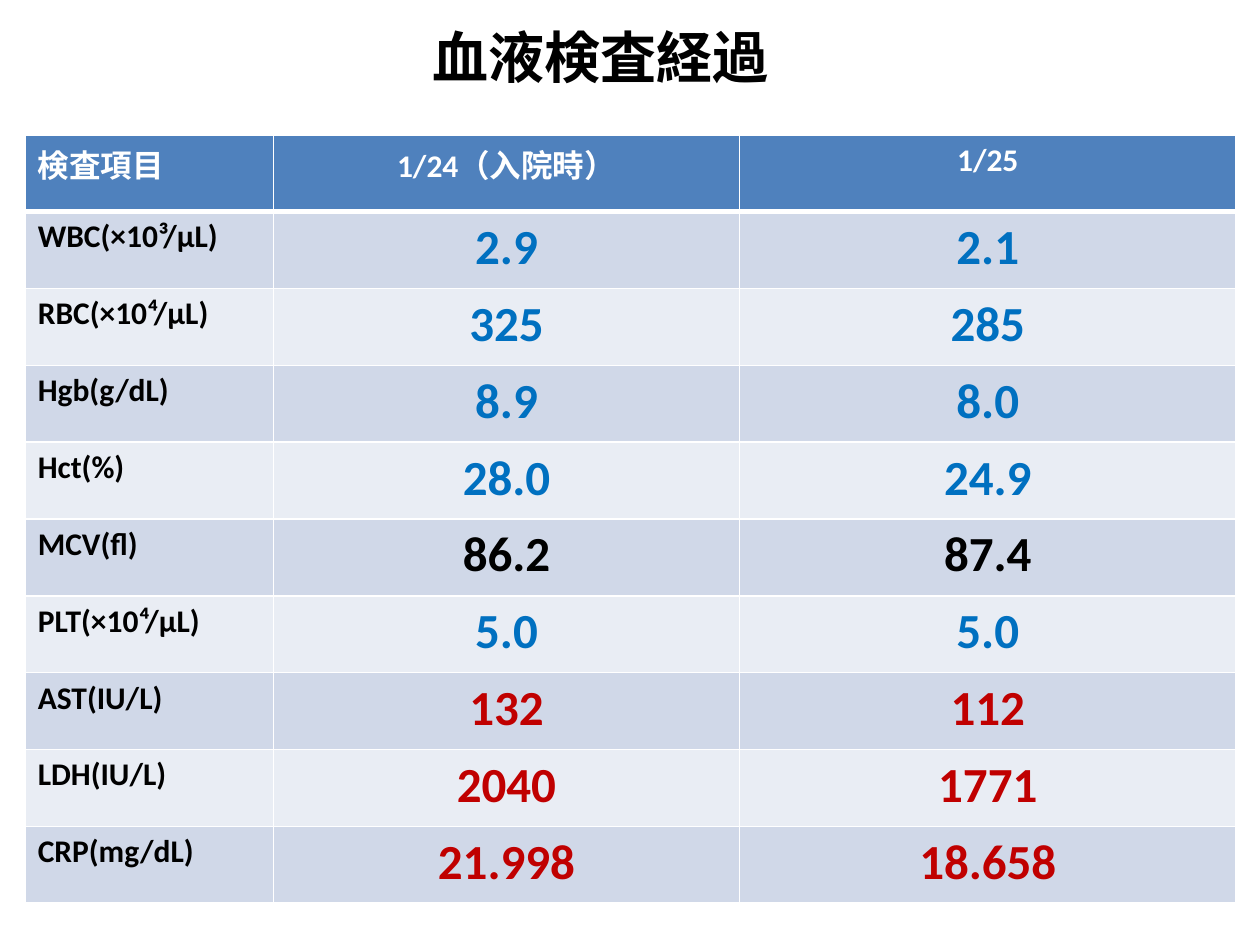
from dataclasses import dataclass

from lxml import etree
from pptx import Presentation
from pptx.dml.color import RGBColor
from pptx.enum.text import MSO_AUTO_SIZE, PP_ALIGN
from pptx.oxml.ns import qn
from pptx.table import _Cell
from pptx.text.text import TextFrame
from pptx.util import Inches, Pt

LEFT, CENTER = PP_ALIGN.LEFT, PP_ALIGN.CENTER
FIT = MSO_AUTO_SIZE.SHAPE_TO_FIT_TEXT

WHITE = RGBColor(0xFF, 0xFF, 0xFF)
BLACK = RGBColor(0x00, 0x00, 0x00)
HEAD = RGBColor(0x4F, 0x81, 0xBD)
BANDS = (RGBColor(0xD0, 0xD8, 0xE8), RGBColor(0xE9, 0xED, 0xF4))
LOW = RGBColor(0x00, 0x70, 0xC0)
HIGH = RGBColor(0xC0, 0x00, 0x00)

WIDTHS = (1.97, 3.7, 3.94)
ROW_H = 0.61


@dataclass
class Test:
    name: str
    first: str
    second: str
    color: RGBColor


HEADS = ("検査項目", "1/24（入院時）", "1/25")
TESTS = (
    Test("WBC(×10³/μL)", "2.9", "2.1", LOW),
    Test("RBC(×10⁴/μL)", "325", "285", LOW),
    Test("Hgb(g/dL)", "8.9", "8.0", LOW),
    Test("Hct(%)", "28.0", "24.9", LOW),
    Test("MCV(fl)", "86.2", "87.4", BLACK),
    Test("PLT(×10⁴/μL)", "5.0", "5.0", LOW),
    Test("AST(IU/L)", "132", "112", HIGH),
    Test("LDH(IU/L)", "2040", "1771", HIGH),
    Test("CRP(mg/dL)", "21.998", "18.658", HIGH),
)


def write(frame: TextFrame, text: str, size: int, color: RGBColor,
          align: PP_ALIGN) -> None:
    para = frame.paragraphs[0]
    para.alignment = align
    run = para.add_run()
    run.text = text
    style = {"name": "Calibri", "size": Pt(size), "bold": True}
    for key, value in style.items():
        setattr(run.font, key, value)
    run.font.color.rgb = color


def edge(cell: _Cell, sides: dict[str, int]) -> None:
    """Draw white borders, with a width in points for each side."""
    props = cell._tc.get_or_add_tcPr()
    for side, width in sides.items():
        line = etree.SubElement(props, qn(f"a:ln{side}"), w=str(Pt(width)))
        fill = etree.SubElement(line, qn("a:solidFill"))
        etree.SubElement(fill, qn("a:srgbClr"), val=str(WHITE))


def paint(cell: _Cell, fill: RGBColor, top: int, bottom: int) -> None:
    # Borders come before the fill in the cell properties
    edge(cell, {"L": 1, "R": 1, "T": top, "B": bottom})
    cell.fill.solid()
    cell.fill.fore_color.rgb = fill


def main() -> None:
    deck = Presentation()
    deck.slide_width, deck.slide_height = Inches(10), Inches(7.5)
    slide = deck.slides.add_slide(deck.slide_layouts[6])

    # Table frame
    count = len(TESTS) + 1
    table = slide.shapes.add_table(
        count, len(WIDTHS), Inches(0.2), Inches(1.07),
        Inches(sum(WIDTHS)), Inches(ROW_H * count)).table
    for column, width in zip(table.columns, WIDTHS):
        column.width = Inches(width)
    for row in table.rows:
        row.height = Inches(ROW_H)

    # Header row
    for col, text in enumerate(HEADS):
        cell = table.cell(0, col)
        paint(cell, HEAD, 1, 3)
        write(cell.text_frame, text, 18, WHITE, CENTER if col else LEFT)

    # Test rows
    for row, test in enumerate(TESTS, 1):
        for col, text in enumerate((test.name, test.first, test.second)):
            cell = table.cell(row, col)
            paint(cell, BANDS[(row - 1) % 2], 3 if row == 1 else 1, 1)
            if col:
                write(cell.text_frame, text, 28, test.color, CENTER)
            else:
                write(cell.text_frame, text, 18, BLACK, LEFT)

    # Title
    title = slide.shapes.add_textbox(
        Inches(1.85), Inches(0.13), Inches(5.83), Inches(0.64)).text_frame
    title.word_wrap = True
    title.auto_size = FIT
    write(title, "血液検査経過", 32, BLACK, CENTER)

    deck.save("out.pptx")


if __name__ == "__main__":
    main()
